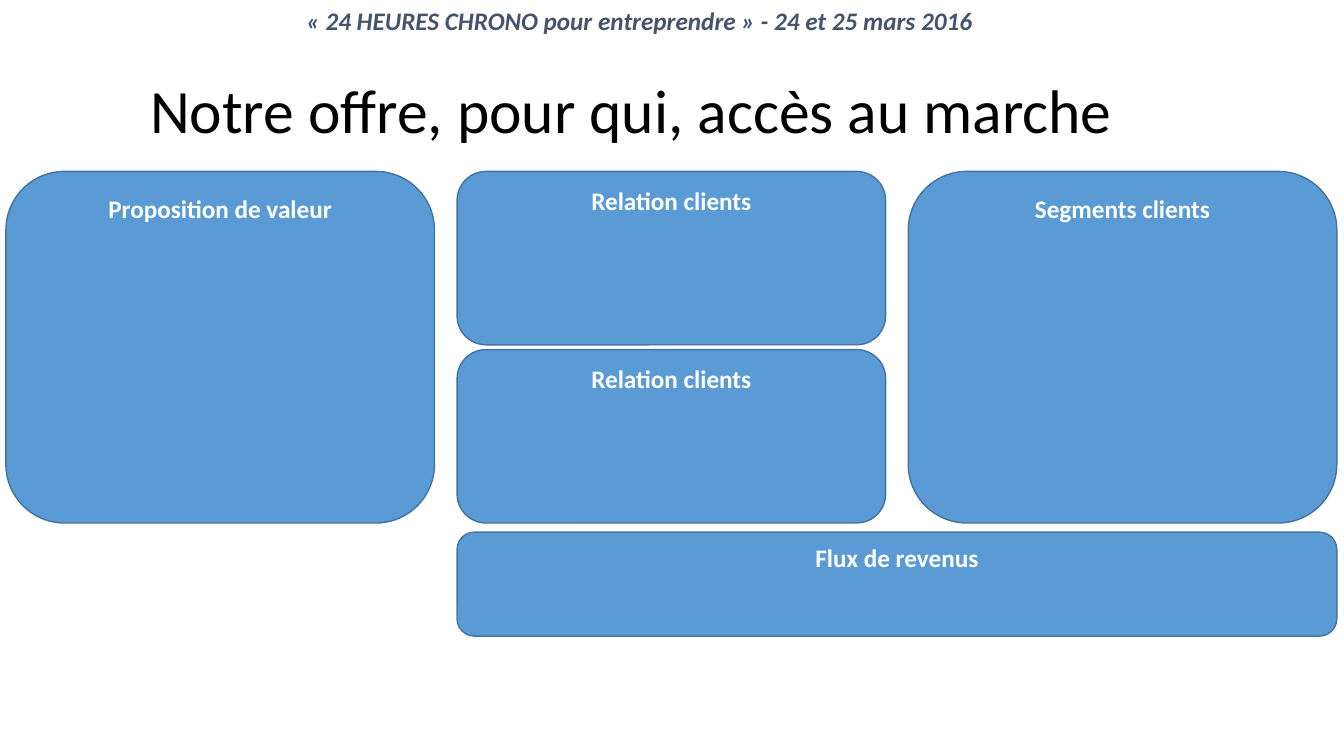
from pptx import Presentation
from pptx.dml.color import RGBColor
from pptx.enum.shapes import MSO_SHAPE
from pptx.enum.text import MSO_ANCHOR, MSO_AUTO_SIZE, PP_ALIGN
from pptx.util import Cm, Pt

ROUNDED = MSO_SHAPE.ROUNDED_RECTANGLE
TOP, MIDDLE = MSO_ANCHOR.TOP, MSO_ANCHOR.MIDDLE
LEFT, CENTER = PP_ALIGN.LEFT, PP_ALIGN.CENTER
FIT_SHAPE = MSO_AUTO_SIZE.SHAPE_TO_FIT_TEXT
TITLE_ONLY = 5

FONT = "Calibri"
BLACK = RGBColor(0x00, 0x00, 0x00)
WHITE = RGBColor(0xFF, 0xFF, 0xFF)
SLATE = RGBColor(0x44, 0x54, 0x6A)
BLUE = RGBColor(0x5B, 0x9B, 0xD5)
DARK_BLUE = RGBColor(0x43, 0x73, 0x9E)

COLUMN_GAP = Cm(0.57)
ROW_GAP = Cm(0.12)
REVENUE_GAP = Cm(0.23)
REVENUE_HEIGHT = Cm(2.62)


def write(shape, text, size, color, alignment, bold=False, italic=False):
    shape.text_frame.text = text
    paragraph = shape.text_frame.paragraphs[0]
    paragraph.alignment = alignment
    font = paragraph.runs[0].font
    font.name, font.size = FONT, Pt(size)
    font.bold, font.italic = bold, italic
    font.color.rgb = color
    return paragraph


def add_event_header(slide, left, top, width, height):
    header = slide.shapes.add_textbox(left, top, width, height)
    header.text_frame.word_wrap = False
    header.text_frame.auto_size = FIT_SHAPE
    write(header, "« 24 HEURES CHRONO pour entreprendre » - 24 et 25 mars 2016",
          18, SLATE, LEFT, bold=True, italic=True)


def place_title(slide, left, top, width, height):
    title = slide.shapes.title
    title.left, title.top, title.width, title.height = left, top, width, height
    title.text_frame.vertical_anchor = MIDDLE
    paragraph = write(title, "Notre offre, pour qui, accès au marche", 44, BLACK, LEFT)
    paragraph.line_spacing = 0.9


def add_block(slide, text, left, top, width, height):
    block = slide.shapes.add_shape(ROUNDED, left, top, width, height)
    block.shadow.inherit = False
    block.fill.solid()
    block.fill.fore_color.rgb = BLUE
    block.line.color.rgb = DARK_BLUE
    block.line.width = Pt(1)
    block.text_frame.vertical_anchor = TOP
    write(block, text, 18, WHITE, CENTER, bold=True)


def add_canvas(slide, left, top, width, height):
    """Three columns, the middle one split, above a revenue band two columns wide."""
    column_width = (width - 2 * COLUMN_GAP) // 3
    column_height = height - REVENUE_GAP - REVENUE_HEIGHT
    half_height = (column_height - ROW_GAP) // 2
    middle, right = (left + i * (column_width + COLUMN_GAP) for i in (1, 2))

    add_block(slide, "Proposition de valeur", left, top, column_width, column_height)
    add_block(slide, "Segments clients", right, top, column_width, column_height)
    for row in range(2):
        add_block(slide, "Relation clients", middle, top + row * (half_height + ROW_GAP),
                  column_width, half_height)
    add_block(slide, "Flux de revenus", middle, top + column_height + REVENUE_GAP,
              right + column_width - middle, REVENUE_HEIGHT)


def main():
    presentation = Presentation()
    presentation.slide_width, presentation.slide_height = Cm(33.87), Cm(19.05)
    slide = presentation.slides.add_slide(presentation.slide_layouts[TITLE_ONLY])
    add_event_header(slide, Cm(7.47), Cm(0), Cm(17.53), Cm(1.03))
    place_title(slide, Cm(3.53), Cm(1.02), Cm(28.02), Cm(3.68))
    add_canvas(slide, Cm(0.15), Cm(4.32), Cm(33.54), Cm(11.71))
    presentation.save("out.pptx")


if __name__ == "__main__":
    main()
